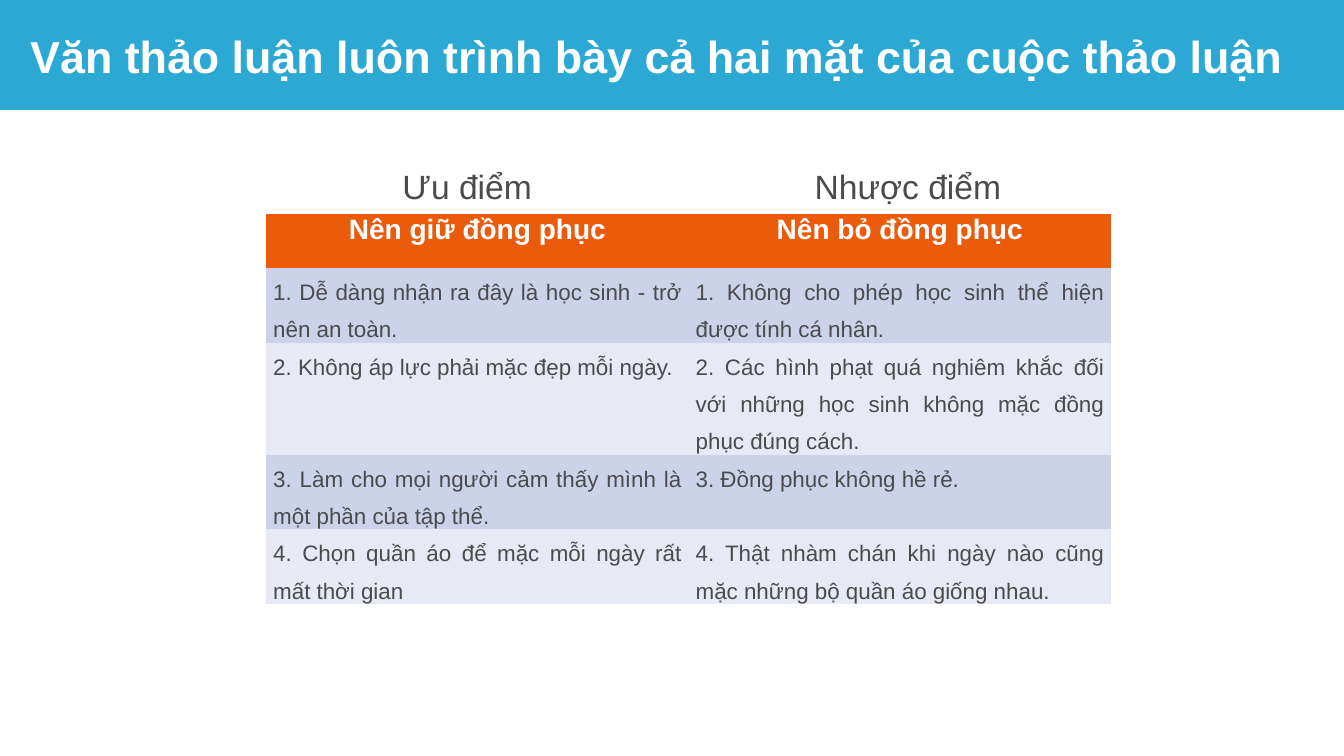
from dataclasses import dataclass

import pptx
import pptx.dml.color
import pptx.enum.shapes
import pptx.enum.text
import pptx.oxml
import pptx.oxml.ns
import pptx.util
from pptx.util import Inches

ALIGN = pptx.enum.text.PP_ALIGN
ANCHOR = pptx.enum.text.MSO_ANCHOR


@dataclass(frozen=True)
class TextStyle:
    size: int
    color: str
    bold: bool = False


@dataclass(frozen=True)
class Theme:
    font: str = "Arial"
    band: str = "2CA8D4"
    header_fill: str = "EA5B0C"
    row_fills: tuple[str, str] = ("CCD3E8", "E7EAF4")
    title: TextStyle = TextStyle(32, "FFFFFF", True)
    column_label: TextStyle = TextStyle(24, "4B4B4B")
    header: TextStyle = TextStyle(20, "FFFFFF", True)
    argument: TextStyle = TextStyle(16, "4B4B4B")


@dataclass(frozen=True)
class ColumnLabel:
    text: str
    text_left: float


@dataclass(frozen=True)
class TableRow:
    pro: str
    con: str
    height: float


THEME = Theme()
NO_TABLE_STYLE = "{2D5ABB26-0587-4C30-8999-92F81FD0307C}"
COLUMN_WIDTH = 4.19
BODY_LEFT = 0.12
LABEL_WIDTH = 6.44
LABELS = (ColumnLabel("Ưu điểm", 3.99), ColumnLabel("Nhược điểm", 8.08))
ROWS = (
    TableRow("Nên giữ đồng phục", "Nên bỏ đồng phục", 0.54),
    TableRow("1. Dễ dàng nhận ra đây là học sinh - trở nên an toàn.",
             "1. Không cho phép học sinh thể hiện được tính cá nhân.", 0.6),
    TableRow("2. Không áp lực phải mặc đẹp mỗi ngày.",
             "2. Các hình phạt quá nghiêm khắc đối với những học sinh "
             "không mặc đồng phục đúng cách.", 0.92),
    TableRow("3. Làm cho mọi người cảm thấy mình là một phần của tập thể.",
             "3. Đồng phục không hề rẻ.", 0.6),
    TableRow("4. Chọn quần áo để mặc mỗi ngày rất mất thời gian",
             "4. Thật nhàm chán khi ngày nào cũng mặc những bộ quần áo giống nhau.", 0.6),
)


def set_fill(target, color: str) -> None:
    target.fill.solid()
    target.fill.fore_color.rgb = pptx.dml.color.RGBColor.from_string(color)


def add_run(paragraph, text: str, style: TextStyle) -> None:
    run = paragraph.add_run()
    run.text = text
    run.font.name = THEME.font
    run.font.size = pptx.util.Pt(style.size)
    run.font.bold = style.bold
    run.font.color.rgb = pptx.dml.color.RGBColor.from_string(style.color)


def place(shape, left: float, top: float, width: float, height: float) -> None:
    shape.left, shape.top = Inches(left), Inches(top)
    shape.width, shape.height = Inches(width), Inches(height)
    shape.text_frame.word_wrap = True
    shape.text_frame.auto_size = pptx.enum.text.MSO_AUTO_SIZE.NONE


def add_title(slide, width: int) -> None:
    title = slide.shapes.title
    place(title, 0.2, -0.04, 12.93, 1.18)
    title.text_frame.vertical_anchor = ANCHOR.MIDDLE
    paragraph = title.text_frame.paragraphs[0]
    paragraph.alignment = ALIGN.LEFT
    add_run(paragraph, "Văn thảo luận luôn trình bày cả hai mặt của cuộc thảo luận", THEME.title)

    # Band behind the title
    band = slide.shapes.add_shape(
        pptx.enum.shapes.MSO_SHAPE.RECTANGLE, 0, 0, width, Inches(1.09))
    band.shadow.inherit = False
    set_fill(band, THEME.band)
    band.line.fill.background()
    title._element.addprevious(band._element)


def add_column_label(slide, index: int, label: ColumnLabel) -> None:
    body = slide.placeholders[index + 1]
    left = BODY_LEFT + index * LABEL_WIDTH
    place(body, left, 1.59, LABEL_WIDTH, 5.09)
    body.text_frame.margin_left = Inches(label.text_left - left)
    body.text_frame.margin_top = Inches(0.06)
    body.text_frame.vertical_anchor = ANCHOR.TOP
    paragraph = body.text_frame.paragraphs[0]

    # No bullet, no hanging indent
    properties = paragraph._p.get_or_add_pPr()
    properties.set("marL", "0")
    properties.set("indent", "0")
    properties.append(pptx.oxml.parse_xml(f'<a:buNone {pptx.oxml.ns.nsdecls("a")}/>'))

    paragraph.alignment = ALIGN.LEFT
    paragraph.line_spacing = 1.0
    paragraph.space_before = pptx.util.Pt(0)
    add_run(paragraph, label.text, THEME.column_label)


def fill_cell(cell, text: str, row_index: int) -> None:
    is_header = row_index == 0
    set_fill(cell, THEME.header_fill if is_header else THEME.row_fills[(row_index - 1) % 2])
    cell.margin_left = cell.margin_right = Inches(0.07)
    cell.margin_top = cell.margin_bottom = 0
    cell.vertical_anchor = ANCHOR.TOP
    paragraph = cell.text_frame.paragraphs[0]
    paragraph.alignment = ALIGN.CENTER if is_header else ALIGN.JUSTIFY
    paragraph.line_spacing = 1.0 if is_header else 1.5
    add_run(paragraph, text, THEME.header if is_header else THEME.argument)


def add_arguments_table(slide) -> None:
    frame = slide.shapes.add_table(
        len(ROWS), 2, Inches(2.64), Inches(2.12),
        Inches(2 * COLUMN_WIDTH), Inches(sum(row.height for row in ROWS)))
    table = frame.table
    table.horz_banding = False
    table._tbl.tblPr.find(pptx.oxml.ns.qn("a:tableStyleId")).text = NO_TABLE_STYLE
    for column in table.columns:
        column.width = Inches(COLUMN_WIDTH)
    for row_index, row in enumerate(ROWS):
        table.rows[row_index].height = Inches(row.height)
        for column_index, text in enumerate((row.pro, row.con)):
            fill_cell(table.cell(row_index, column_index), text, row_index)


def main() -> None:
    presentation = pptx.Presentation()
    presentation.slide_width = Inches(13.33)
    presentation.slide_height = Inches(7.5)

    # Two Content layout: a title and one body for each side of the debate
    slide = presentation.slides.add_slide(presentation.slide_layouts[3])
    add_title(slide, presentation.slide_width)
    for index, label in enumerate(LABELS):
        add_column_label(slide, index, label)
    add_arguments_table(slide)
    presentation.save("out.pptx")


if __name__ == "__main__":
    main()
